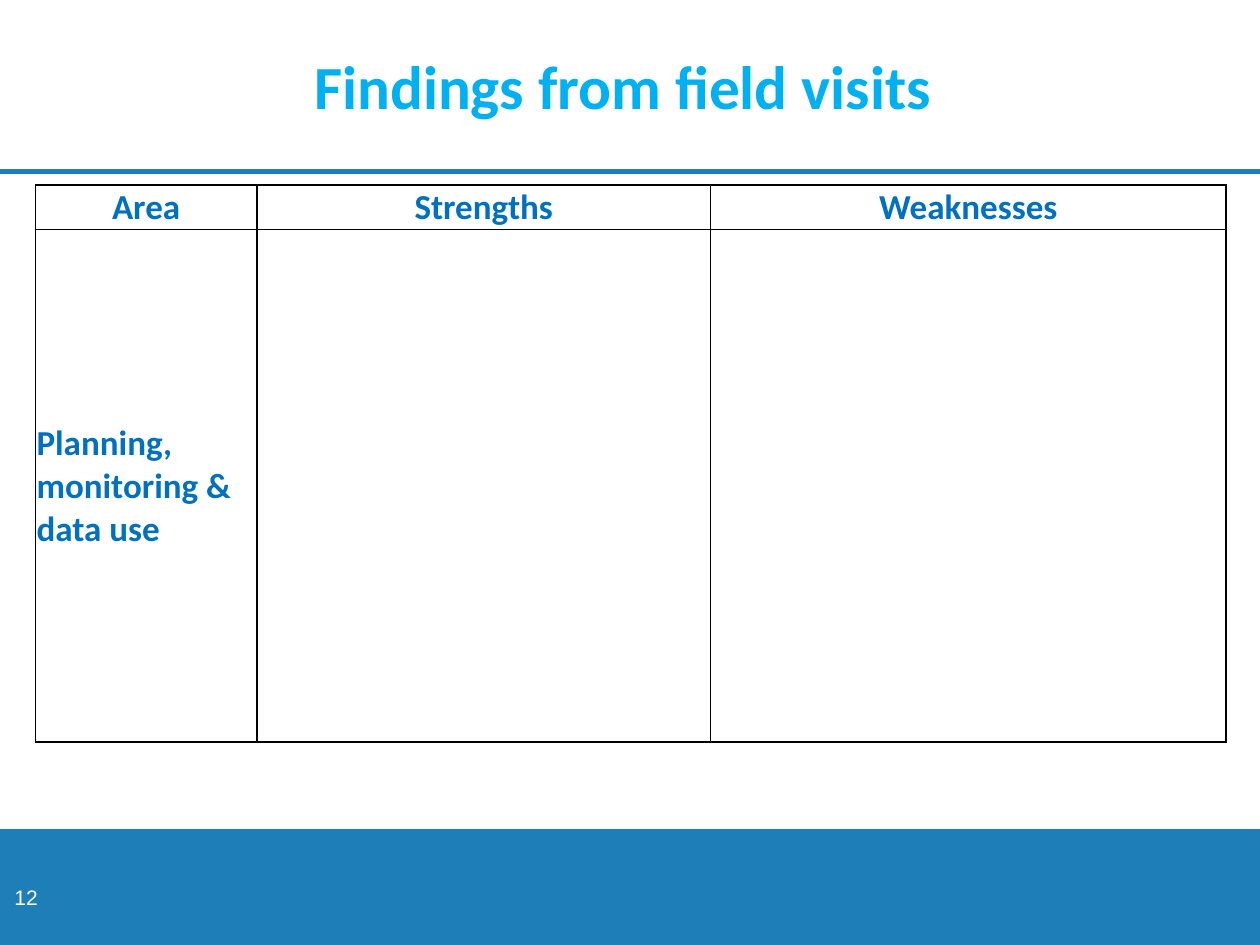
"""Build the field visit findings slide with its strengths and weaknesses table."""
from lxml.etree import SubElement
from pptx import Presentation
from pptx.dml.color import RGBColor
from pptx.enum.shapes import MSO_CONNECTOR, MSO_SHAPE
from pptx.enum.text import MSO_ANCHOR, PP_ALIGN
from pptx.oxml import parse_xml
from pptx.oxml.ns import nsdecls, qn
from pptx.util import Inches, Pt

BAND_BLUE = "1E7FB8"


def color(value):
    return RGBColor.from_string(value)


def write(frame, text, size=20, font="Calibri", fill="0070C0", bold=True,
          align=PP_ALIGN.CENTER):
    para = frame.paragraphs[0]
    para.alignment = align
    span = para.add_run()
    span.text = text
    span.font.size = Pt(size)
    span.font.bold = bold
    span.font.color.rgb = color(fill)
    span.font.name = font
    return span


deck = Presentation()
deck.slide_width, deck.slide_height = Inches(10), Inches(7.5)
page = deck.slides.add_slide(deck.slide_layouts[5])
width, height = deck.slide_width, deck.slide_height

rule_top = Inches(1.36)
rule = page.shapes.add_connector(MSO_CONNECTOR.STRAIGHT, 0, rule_top, width, rule_top)
rule.line.color.rgb = color(BAND_BLUE)
rule.line.width = Pt(3)
SubElement(rule.element.spPr, qn("a:effectLst"))

footer_top = Inches(6.58)
footer = page.shapes.add_shape(MSO_SHAPE.RECTANGLE, 0, footer_top, width, height - footer_top)
footer.shadow.inherit = False
footer.fill.solid()
footer.fill.fore_color.rgb = color(BAND_BLUE)
footer.line.fill.background()

title = page.shapes.title
title.left, title.top, title.width, title.height = 0, 0, width, Inches(1.35)
frame = title.text_frame
frame.margin_left = frame.margin_right = frame.margin_top = frame.margin_bottom = 0
frame.vertical_anchor = MSO_ANCHOR.MIDDLE
frame.word_wrap = True
heading = write(frame, "Findings from field visits ", size=35, fill="00B0F0")
heading.font._element.find(qn("a:solidFill")).addnext(parse_xml(
    f'<a:effectLst {nsdecls("a")}><a:outerShdw blurRad="38100" dist="38100" dir="2700000">'
    '<a:srgbClr val="000000"><a:alpha val="43000"/></a:srgbClr>'
    '</a:outerShdw></a:effectLst>'))

number = page.shapes.add_textbox(Inches(-0.63), Inches(6.98), Inches(1.02), Inches(0.52))
number.text_frame.word_wrap = True
number.text_frame.margin_left = number.text_frame.margin_right = Inches(0.09)
number.text_frame.margin_top = number.text_frame.margin_bottom = Inches(0.04)
write(number.text_frame, "12", size=12, font="Arial", fill="FFFFFF", bold=False,
      align=PP_ALIGN.RIGHT)

rows = [["Area", "Strengths", "Weaknesses"],
        ["Planning, monitoring & data use", "", ""]]
column_widths = [1.76, 3.6, 4.09]
row_heights = [0.35, 4.07]
table = page.shapes.add_table(
    len(rows), len(column_widths), Inches(0.28), Inches(1.47),
    Inches(sum(column_widths)), Inches(sum(row_heights))).table
table.horz_banding = False
for column, size in zip(table.columns, column_widths):
    column.width = Inches(size)
for row, size in zip(table.rows, row_heights):
    row.height = Inches(size)

for row_index, labels in enumerate(rows):
    for column_index, label in enumerate(labels):
        cell = table.cell(row_index, column_index)
        cell.margin_left = cell.margin_right = cell.margin_top = Inches(0.01)
        cell.margin_bottom = 0
        cell.vertical_anchor = MSO_ANCHOR.MIDDLE if row_index else MSO_ANCHOR.BOTTOM
        properties = cell._tc.get_or_add_tcPr()
        for side in ("lnL", "lnR", "lnT", "lnB"):
            properties.append(parse_xml(
                f'<a:{side} {nsdecls("a")} w="{Pt(1)}"><a:solidFill>'
                f'<a:srgbClr val="000000"/></a:solidFill></a:{side}>'))
        cell.fill.background()
        if label:
            write(cell.text_frame, label,
                  align=PP_ALIGN.LEFT if row_index else PP_ALIGN.CENTER)

deck.save("out.pptx")
